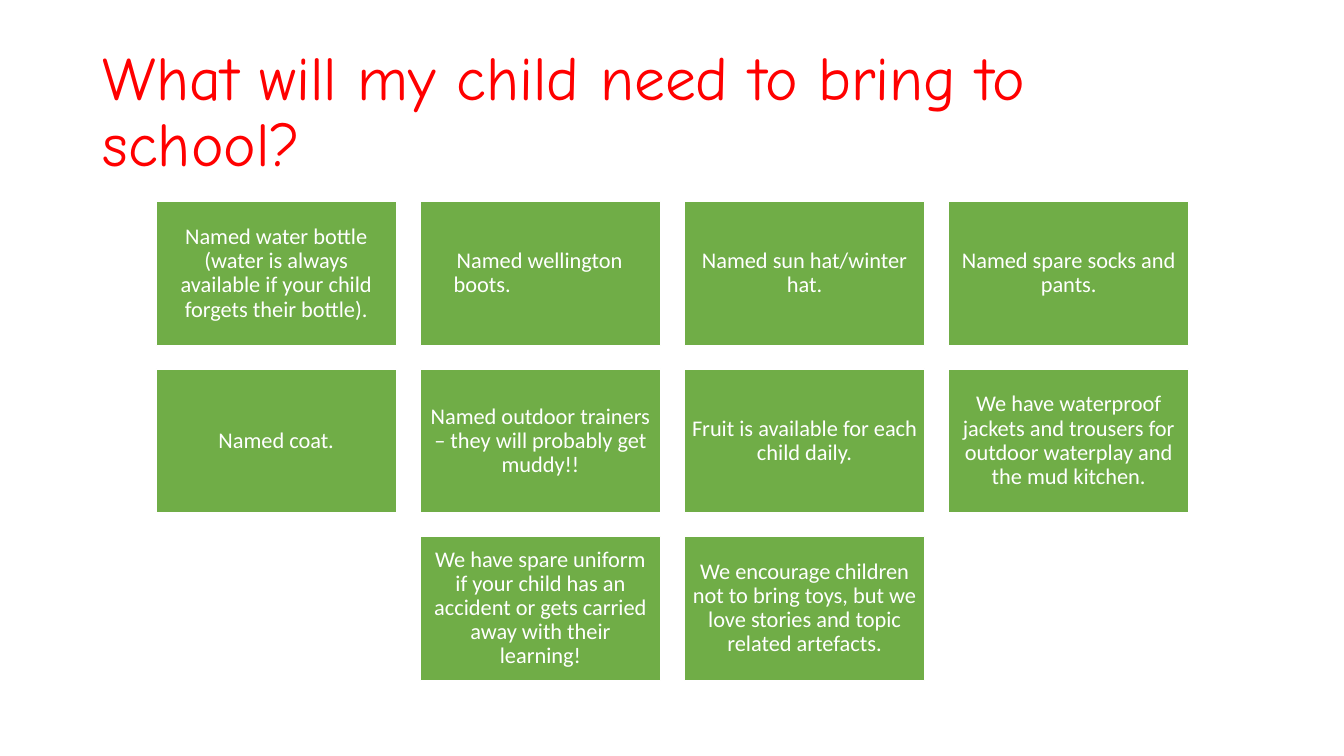
from pptx import Presentation
from pptx.dml.color import RGBColor
from pptx.enum.shapes import MSO_SHAPE
from pptx.enum.text import MSO_ANCHOR, MSO_AUTO_SIZE, PP_ALIGN
from pptx.util import Pt

RECT = MSO_SHAPE.RECTANGLE
MIDDLE = MSO_ANCHOR.MIDDLE
NO_FIT = MSO_AUTO_SIZE.NONE
LEFT, CENTER = PP_ALIGN.LEFT, PP_ALIGN.CENTER

SCALE = 9144  # EMU in one px, 100 px to the inch

ROWS = [
    (0, ["Named water bottle (water is always available if your child forgets their bottle).",
         "Named wellington boots.",
         "Named sun hat/winter hat.",
         "Named spare socks and pants."]),
    (0, ["Named coat.",
         "Named outdoor trainers – they will probably get muddy!!",
         "Fruit is available for each child daily.",
         "We have waterproof jackets and trousers for outdoor waterplay and the mud kitchen."]),
    (1, ["We have spare uniform if your child has an accident or gets carried away with their learning!",
         "We encourage children not to bring toys, but we love stories and topic related artefacts."]),
]


def px(n):
    return n * SCALE


def color(code):
    return RGBColor.from_string(code)


class Board:
    red, green, white = "FF0000", "70AD47", "FFFFFF"

    def __init__(self, slide):
        self.slide = slide

    def label(self, frame, text, font, size, ink, align, inset):
        """Fill a text frame with one styled paragraph and return it."""
        frame.word_wrap = True
        frame.auto_size = NO_FIT
        frame.vertical_anchor = MIDDLE
        frame.margin_left = frame.margin_right = px(inset[0])
        frame.margin_top = frame.margin_bottom = px(inset[1])
        para = frame.paragraphs[0]
        para.text = text
        para.alignment = align
        para.line_spacing = 0.9
        para.font.name = font
        para.font.size = Pt(size)
        para.font.color.rgb = color(ink)
        return para

    def title(self, text, x, y, w, h):
        head = self.slide.shapes.title
        head.left, head.top, head.width, head.height = map(px, (x, y, w, h))
        self.label(head.text_frame, text, "Comic Neue", 44, self.red, LEFT, (10, 5))

    def card(self, text, x, y, w, h):
        box = self.slide.shapes.add_shape(RECT, *map(px, (x, y, w, h)))
        box.shadow.inherit = False
        box.fill.solid()
        box.fill.fore_color.rgb = color(self.green)
        box.line.color.rgb = color(self.white)
        box.line.width = Pt(1)
        return self.label(box.text_frame, text, "Calibri", 16, self.white, CENTER, (7, 7))

    def indent(self, para, margin, first):
        """Align left, with the first line set off from the margin."""
        para.alignment = LEFT
        props = para._p.get_or_add_pPr()
        props.set("marL", str(px(margin)))
        props.set("indent", str(px(first)))


def main():
    deck = Presentation()
    deck.slide_width, deck.slide_height = px(1333), px(750)
    board = Board(deck.slides.add_slide(deck.slide_layouts[5]))
    board.title("What will my child need to bring to school?", 92, 40, 1150, 145)
    for row, (start, texts) in enumerate(ROWS):
        for col, text in enumerate(texts, start):
            para = board.card(text, 155 + 262 * col, 200 + 166 * row, 238, 143)
            if (row, col) == (0, 1):
                board.indent(para, 26, 3)
    deck.save("out.pptx")


if __name__ == "__main__":
    main()
